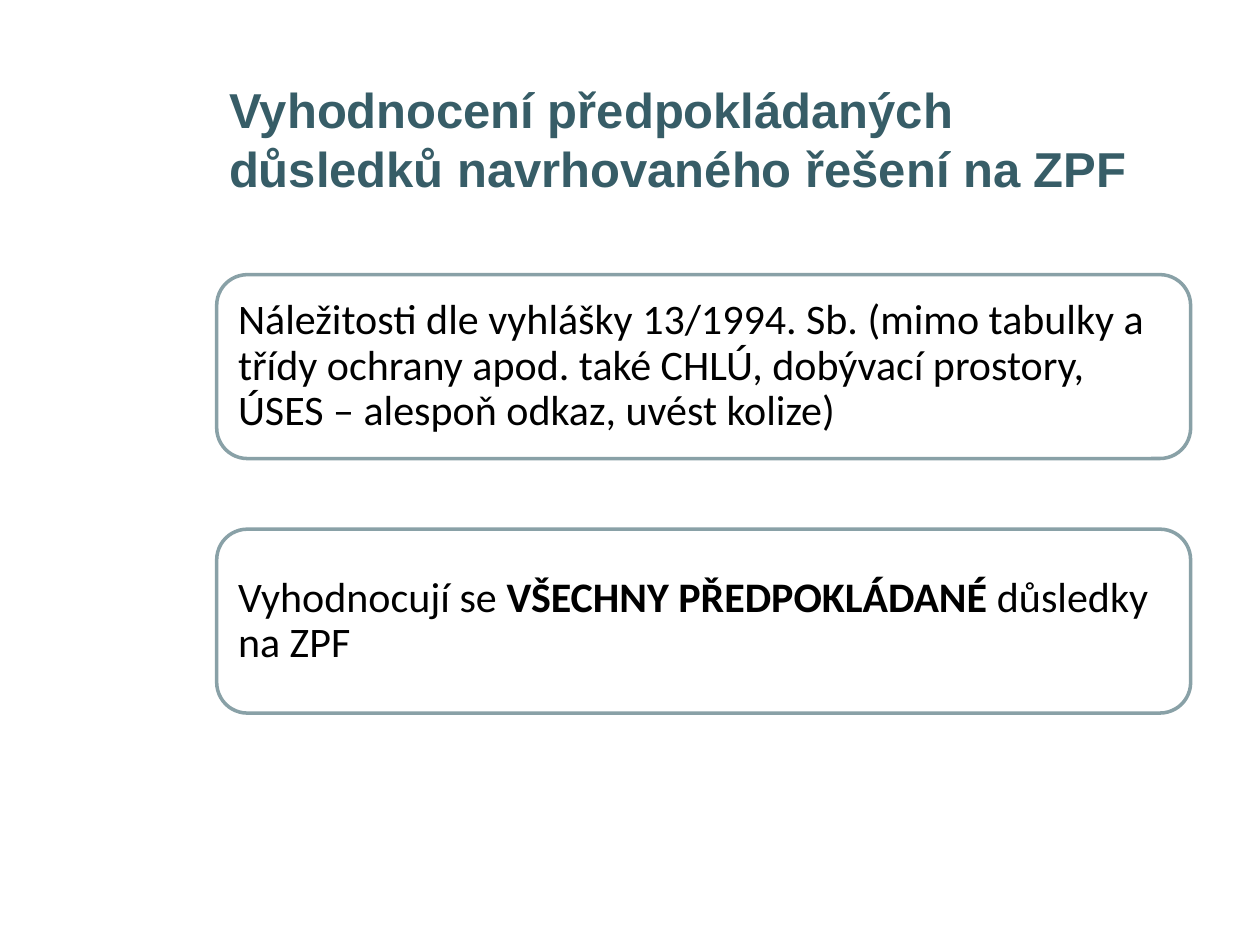
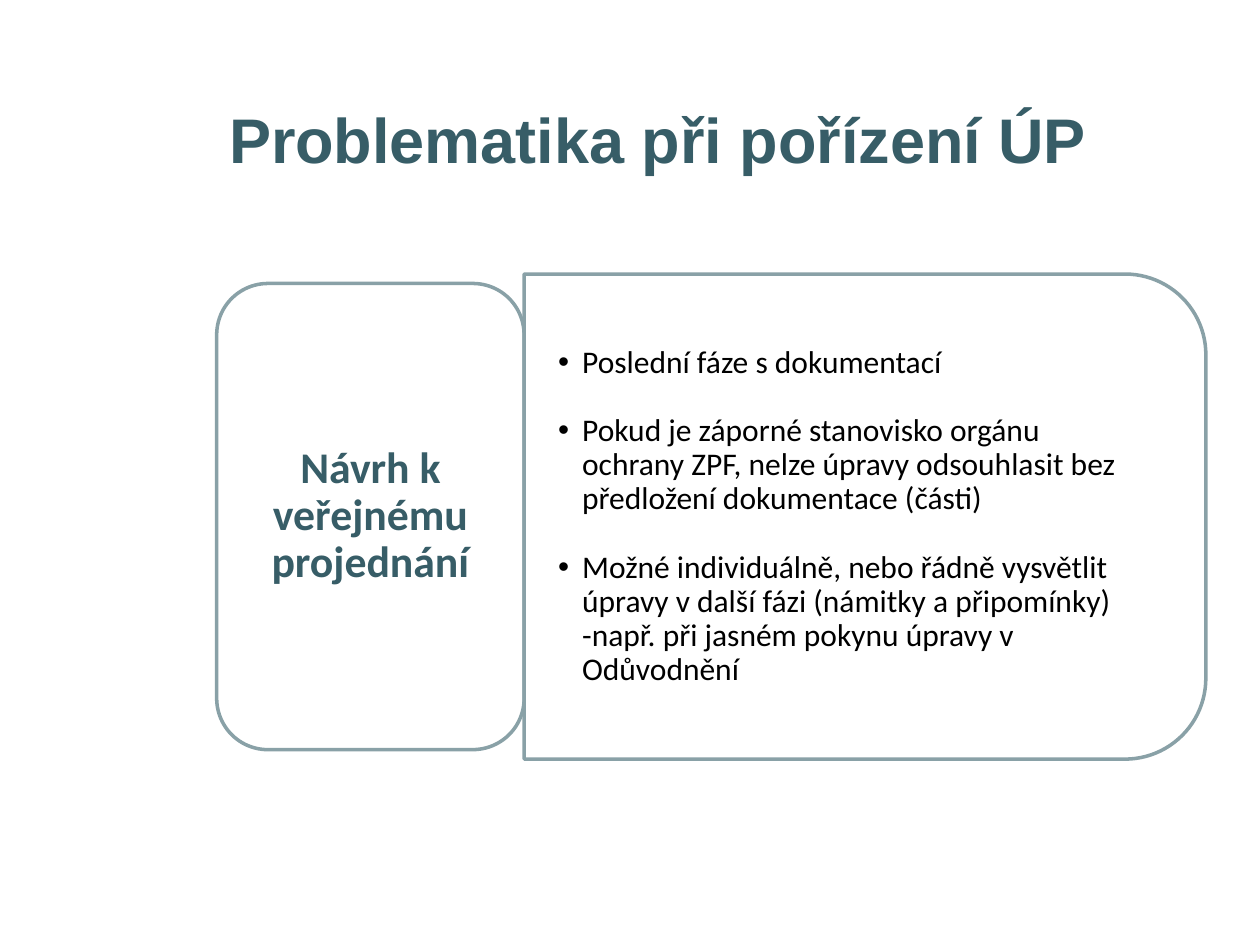
from lxml import etree
from pptx import Presentation
from pptx import util as u
from pptx.dml.color import RGBColor
from pptx.enum import shapes, text
from pptx.oxml.ns import qn

TEAL, GREY, BLACK, WHITE = "375D67", "89A1A7", "000000", "FFFFFF"
LEFT, WIDTH = 1.72, 7.73

IMPACT_TITLE = "Vyhodnocení předpokládaných důsledků navrhovaného řešení na ZPF"
REQUIREMENTS = [
    [("Náležitosti dle vyhlášky 13/1994. Sb. (mimo tabulky a třídy ochrany apod. "
      "také CHLÚ, dobývací prostory, ÚSES – alespoň odkaz, uvést kolize)", False)],
    [("Vyhodnocují se ", False), ("VŠECHNY PŘEDPOKLÁDANÉ ", True),
     ("důsledky na ZPF", False)],
]

ISSUES_TITLE = "Problematika při pořízení ÚP"
PHASE = "Návrh k veřejnému projednání"
PHASE_NOTES = [
    "Poslední fáze s dokumentací",
    "Pokud je záporné stanovisko orgánu ochrany ZPF, nelze úpravy odsouhlasit "
    "bez předložení dokumentace (části)",
    "Možné individuálně, nebo řádně vysvětlit úpravy v další fázi (námitky "
    "a připomínky) -např. při jasném pokynu úpravy v Odůvodnění",
]


def rgb(value):
    return RGBColor.from_string(value)


def box(area):
    return [u.Inches(v) for v in area]


def setup_frame(sp, margin_x, margin_y):
    tf = sp.text_frame
    tf.word_wrap = True
    tf.vertical_anchor = text.MSO_ANCHOR.MIDDLE
    tf.margin_left = tf.margin_right = u.Inches(margin_x)
    tf.margin_top = tf.margin_bottom = u.Inches(margin_y)
    return tf


def add_runs(p, runs, size, color=BLACK, font="Calibri", spacing=0.9,
             align=text.PP_ALIGN.LEFT):
    p.alignment = align
    p.line_spacing = spacing
    for words, bold in runs:
        r = p.add_run()
        r.text = words
        r.font.name, r.font.size, r.font.bold = font, u.Pt(size), bold
        r.font.color.rgb = rgb(color)


def add_bullet(p, indent):
    pPr = p._p.get_or_add_pPr()
    pPr.set("marL", str(u.Inches(indent)))
    pPr.set("indent", str(-u.Inches(indent)))
    etree.SubElement(pPr, qn("a:buFont")).set("typeface", "Arial")
    etree.SubElement(pPr, qn("a:buChar")).set("char", "•")


def add_slide(prs, title, size):
    s = prs.slides.add_slide(prs.slide_layouts[6])
    s.background.fill.solid()
    s.background.fill.fore_color.rgb = rgb(WHITE)
    tf = setup_frame(s.shapes.add_textbox(*box((LEFT, 0.47, WIDTH, 1.25))), 0.1, 0.05)
    add_runs(tf.paragraphs[0], [(title, True)], size, TEAL, "Arial", 1.0)
    return s


def add_panel(s, area, kind=shapes.MSO_SHAPE.ROUNDED_RECTANGLE, fill=None):
    sp = s.shapes.add_shape(kind, *box(area))
    sp.shadow.inherit = False
    if fill:
        sp.fill.solid()
        sp.fill.fore_color.rgb = rgb(fill)
    else:
        sp.fill.background()
    sp.line.color.rgb = rgb(GREY)
    sp.line.width = u.Pt(2)
    return sp


def build_impact(prs):
    s = add_slide(prs, IMPACT_TITLE, 28)
    top, height, pitch = 2.18, 1.46, 2.02
    for i, runs in enumerate(REQUIREMENTS):
        sp = add_panel(s, (LEFT, top + i * pitch, WIDTH, height))
        add_runs(setup_frame(sp, 0.1, 0.1).paragraphs[0], runs, 24)


def build_issues(prs):
    s = add_slide(prs, ISSUES_TITLE, 36)
    phase_width, phase_height = 2.44, 3.7
    notes_width, notes_height = 5.41, 3.85
    middle = 4.1
    notes_left = LEFT + phase_width

    notes = add_panel(s, (notes_left + (notes_width - notes_height) / 2,
                          middle - notes_width / 2, notes_height, notes_width),
                      shapes.MSO_SHAPE.ROUND_2_SAME_RECTANGLE, WHITE)
    notes.rotation = 90
    tf = setup_frame(s.shapes.add_textbox(*box((notes_left, 2.36, 5.22, 3.48))), 0.27, 0.14)
    for i, note in enumerate(PHASE_NOTES):
        p = tf.add_paragraph() if i else tf.paragraphs[0]
        add_bullet(p, 0.19)
        if i:
            p.space_before = u.Pt(19.7)
        add_runs(p, [(note, False)], 18)

    phase = add_panel(s, (LEFT, middle - phase_height / 2, phase_width, phase_height))
    add_runs(setup_frame(phase, 0.1, 0.05).paragraphs[0], [(PHASE, True)], 25, TEAL,
             align=text.PP_ALIGN.CENTER)


def main():
    prs = Presentation()
    prs.slide_width, prs.slide_height = u.Inches(10), u.Inches(7.5)
    build_impact(prs)
    build_issues(prs)
    prs.save("out.pptx")


if __name__ == "__main__":
    main()
